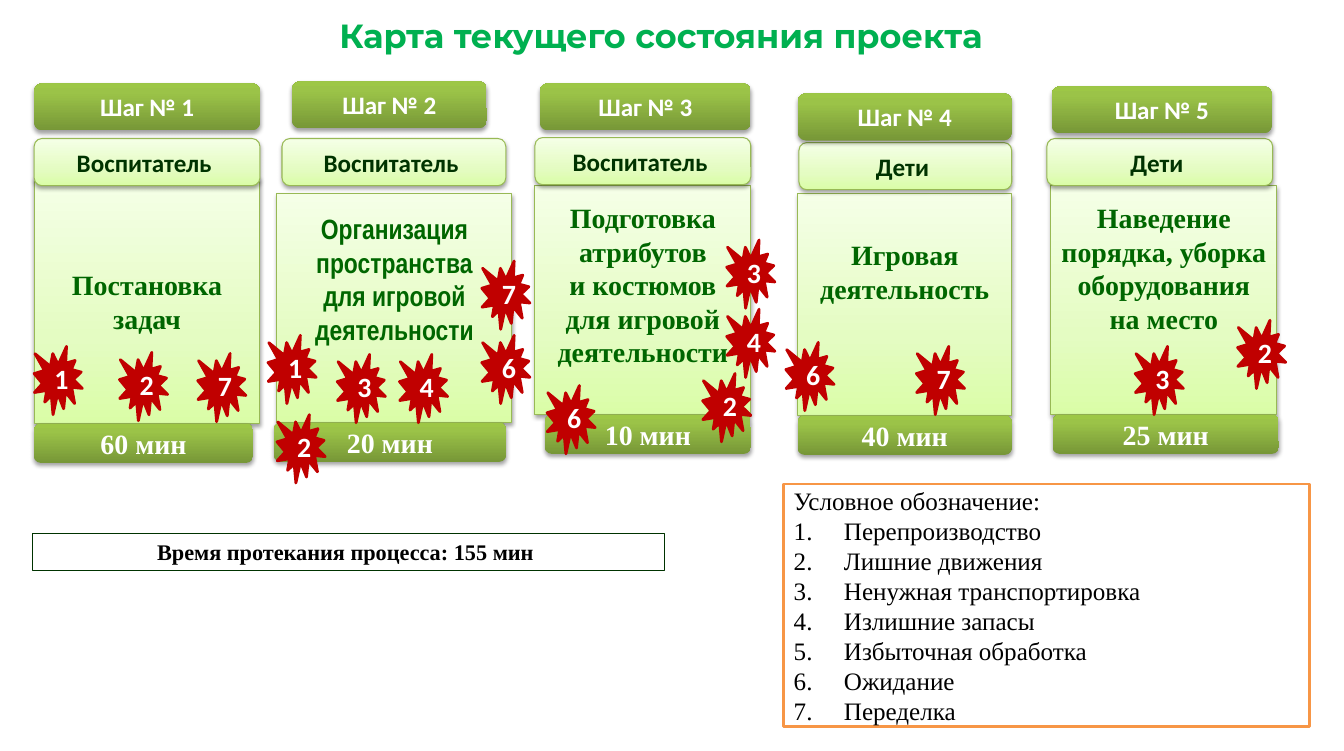
from copy import deepcopy
from dataclasses import dataclass

from lxml import etree
from pptx import Presentation
from pptx.dml.color import RGBColor
from pptx.enum.shapes import MSO_SHAPE as Preset
from pptx.enum.text import MSO_ANCHOR as Anchor, PP_ALIGN as Align
from pptx.oxml.ns import qn
from pptx.util import Inches, Pt

SERIF, SANS, NARROW = "Times New Roman", "Calibri", "Arial Narrow"
DARK_GREEN = [(0, "779737"), (0.8, "9BC348"), (1, "9DC746")]
PALE_GREEN = [(0, "DAFDA7"), (0.35, "E4FCC2"), (1, "F5FFE7")]
PALE_LINE = "98B955"
HEADER_HEIGHT, TIME_HEIGHT = 0.47, 0.39
SEAL_SIZE = (0.48, 0.68)


@dataclass
class Step:
    """Body box, parts as (left, top, width) or (left, width) offsets from it, seals as (number, left, top)."""
    box: tuple
    title_place: tuple
    role: str
    role_place: tuple
    action: list
    action_top: float
    minutes: int
    time_place: tuple
    seals: list
    action_font: str = SERIF


STEPS = [
    Step((0.34, 1.77, 2.25, 2.45), (0, -0.94, 2.25), "Воспитатель ", (0, -0.39, 2.25),
         ["Постановка задач"], 0.9, 60, (0, 2.18),
         [(1, 0, 1.68), (2, 0.85, 1.74), (7, 1.63, 1.75)]),
    Step((2.76, 1.93, 2.34, 2.28), (0.15, -1.12, 1.94), "Воспитатель ", (0.05, -0.55, 2.23),
         ["Организация пространства", "для игровой деятельности"], 0.18, 20, (-0.03, 2.31),
         [(1, -0.09, 1.41), (2, 0, 2.2), (3, 0.6, 1.6), (4, 1.22, 1.6),
          (6, 2.04, 1.41), (7, 2.04, 0.67)], NARROW),
    Step((5.33, 1.85, 2.15, 2.28), (0.05, -1.02, 2.1), "Воспитатель ", (0, -0.48, 2.15),
         ["Подготовка атрибутов", "и костюмов для игровой деятельности"], 0.15, 10, (0.1, 2.05),
         [(3, 1.91, 0.54), (4, 1.91, 1.23), (2, 1.67, 1.87), (6, 0.12, 1.99)]),
    Step((7.95, 1.93, 2.13, 2.21), (0, -1, 2.13), "Дети ", (0.01, -0.51, 2.12),
         ["Игровая деятельность"], 0.44, 40, (0, 2.13),
         [(6, -0.12, 1.48), (7, 1.18, 1.52)]),
    Step((10.47, 1.85, 2.25, 2.28), (0.01, -0.99, 2.19), "Дети ", (-0.04, -0.47, 2.25),
         ["Наведение порядка, уборка оборудования на место"], 0.15, 25, (0.02, 2.25),
         [(2, 1.86, 1.34), (3, 0.84, 1.6)]),
]
LOSSES = ["Перепроизводство", "Лишние движения", "Ненужная транспортировка", "Излишние запасы",
          "Избыточная обработка", "Ожидание", "Переделка"]


def color(value):
    return RGBColor.from_string(value)


def add_box(slide, preset, box, fill=None, line=None, line_width=0.75):
    shape = slide.shapes.add_shape(preset, *map(Inches, box))
    shape.shadow.inherit = False
    if isinstance(fill, list):
        fill_gradient(shape, fill)
    elif fill:
        shape.fill.solid()
        shape.fill.fore_color.rgb = color(fill)
    else:
        shape.fill.background()
    if line:
        shape.line.color.rgb = color(line)
        shape.line.width = Pt(line_width)
    else:
        shape.line.fill.background()
    return shape


def fill_gradient(shape, stops):
    """Fill from the bottom up with three stops and cast a soft shadow below."""
    shape.fill.gradient()
    shape.fill.gradient_angle = 90
    stop_list = shape.element.spPr.find(qn("a:gradFill")).find(qn("a:gsLst"))
    stop_list.append(deepcopy(stop_list[-1]))
    for stop, (position, value) in zip(shape.fill.gradient_stops, stops):
        stop.position = position
        stop.color.rgb = color(value)
    effects = shape.element.spPr.find(qn("a:effectLst"))
    shadow = etree.SubElement(effects, qn("a:outerShdw"), blurRad=str(Pt(3.1)), dist=str(Pt(1.7)),
                              dir="5400000", rotWithShape="0")
    black = etree.SubElement(shadow, qn("a:srgbClr"), val="000000")
    etree.SubElement(black, qn("a:alpha"), val="36000")


def write(shape, lines, size, font, value, bold=True, align=Align.CENTER, anchor=Anchor.MIDDLE):
    frame = shape.text_frame
    frame.word_wrap = True
    frame.vertical_anchor = anchor
    frame.text = "\n".join(lines)
    for paragraph in frame.paragraphs:
        paragraph.alignment = align
        for run in paragraph.runs:
            run.font.size = Pt(size)
            run.font.name = font
            run.font.bold = bold
            run.font.color.rgb = color(value)
    return frame


def add_title(slide, box):
    shape = add_box(slide, Preset.RECTANGLE, box, line="FFFFFF")
    frame = write(shape, ["Карта текущего состояния проекта"], 24, "Montserrat", "00B050",
                  anchor=Anchor.TOP)
    frame.word_wrap = False


def add_step(slide, number, step):
    left, top, width, height = step.box
    body = add_box(slide, Preset.RECTANGLE, step.box, PALE_GREEN, PALE_LINE)
    frame = write(body, step.action, 20, step.action_font, "006600", anchor=Anchor.TOP)
    frame.margin_top = Inches(step.action_top)

    time_left, time_width = step.time_place
    time = add_box(slide, Preset.ROUNDED_RECTANGLE,
                   (left + time_left, top + height, time_width, TIME_HEIGHT), DARK_GREEN)
    write(time, [f"{step.minutes} мин"], 20, SERIF, "FFFFFF")

    headers = [(step.role, step.role_place, PALE_GREEN, PALE_LINE, "003300"),
               (f"Шаг № {number}", step.title_place, DARK_GREEN, None, "FFFFFF")]
    for text, (dx, dy, header_width), fill, line, text_color in headers:
        header = add_box(slide, Preset.ROUNDED_RECTANGLE,
                         (left + dx, top + dy, header_width, HEADER_HEIGHT), fill, line)
        write(header, [text], 18, SANS, text_color)

    for loss, dx, dy in step.seals:
        seal = add_box(slide, Preset.EXPLOSION1, (left + dx, top + dy, *SEAL_SIZE),
                       "C00000", "C00000", 2)
        write(seal, [str(loss)], 20, SANS, "FFFFFF")


def add_total_time(slide, box):
    shape = add_box(slide, Preset.RECTANGLE, box, line="003300")
    write(shape, ["Время протекания процесса: 155 мин "], 16, SERIF, "000000", anchor=Anchor.TOP)


def add_legend(slide, box):
    shape = add_box(slide, Preset.RECTANGLE, box, "FFFFFF", "F79646", 2)
    frame = write(shape, ["Условное обозначение:", *LOSSES], 18, SERIF, "000000",
                  bold=False, align=Align.JUSTIFY)
    for paragraph in frame.paragraphs[1:]:
        properties = paragraph._p.get_or_add_pPr()
        properties.set("marL", str(Inches(0.5)))
        properties.set("indent", str(-Inches(0.5)))
        etree.SubElement(properties, qn("a:buFont"), typeface="+mj-lt")
        etree.SubElement(properties, qn("a:buAutoNum"), type="arabicPeriod")


def main():
    presentation = Presentation()
    presentation.slide_width, presentation.slide_height = Inches(13.39), Inches(7.48)
    slide = presentation.slides.add_slide(presentation.slide_layouts[6])
    add_title(slide, (3.15, 0.1, 6.87, 0.5))
    for number, step in enumerate(STEPS, 1):
        add_step(slide, number, step)
    add_total_time(slide, (0.32, 5.31, 6.3, 0.37))
    add_legend(slide, (7.81, 4.82, 5.24, 2.42))
    presentation.save("out.pptx")


if __name__ == "__main__":
    main()
